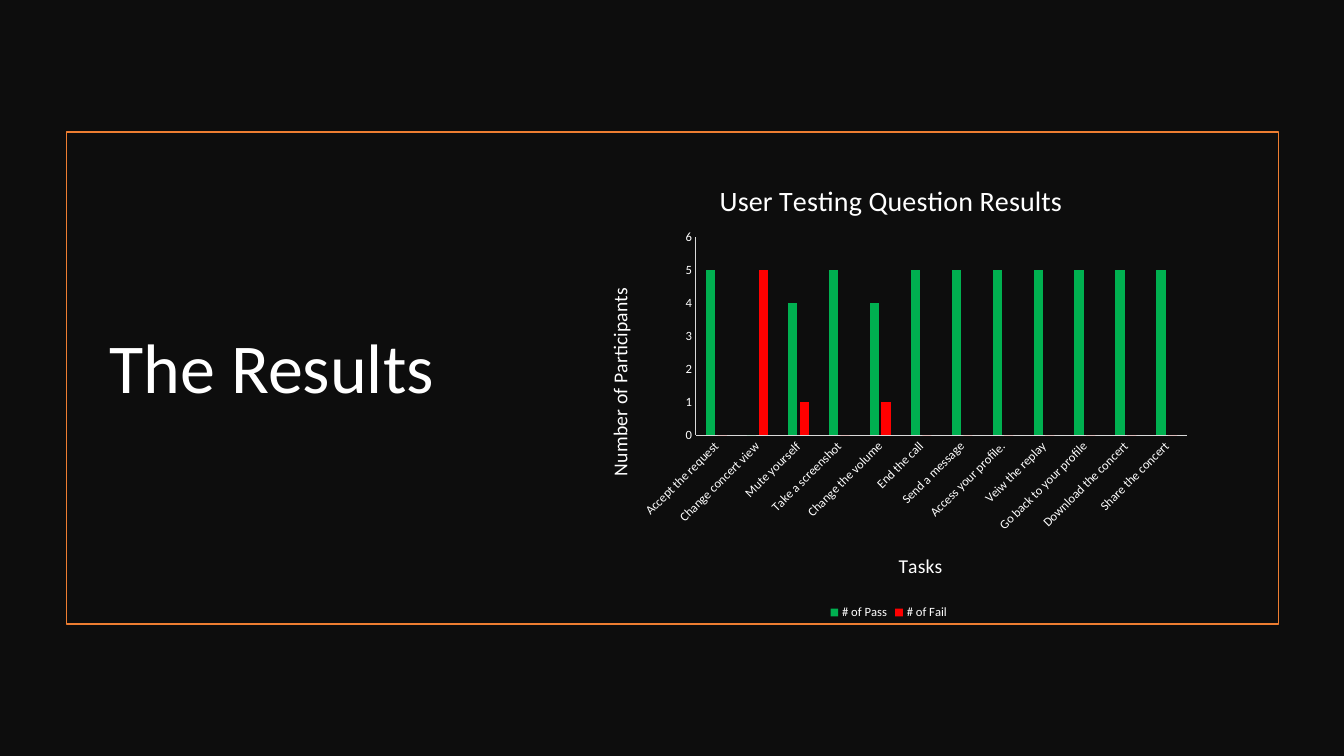
from lxml import etree
from pptx import Presentation
from pptx.chart.data import CategoryChartData
from pptx.dml.color import RGBColor
from pptx.enum.chart import XL_CHART_TYPE, XL_LEGEND_POSITION, XL_TICK_MARK
from pptx.enum.shapes import MSO_SHAPE
from pptx.enum.text import MSO_ANCHOR
from pptx.oxml.ns import qn
from pptx.util import Inches, Pt

COLUMN = XL_CHART_TYPE.COLUMN_CLUSTERED
BOTTOM = XL_LEGEND_POSITION.BOTTOM
NO_TICK = XL_TICK_MARK.NONE
RECT = MSO_SHAPE.RECTANGLE
ANCHOR = MSO_ANCHOR.BOTTOM

WIDE, HIGH = 13.33, 7.5
FONT = "Calibri"
HEX = {"back": "0D0D0D", "text": "FFFFFF", "frame": "ED7D31",
       "axis": "D9D9D9", "pass": "00B050", "fail": "FF0000"}

# task, passes, fails
TASKS = [
    ("Accept the request", 5, 0),
    ("Change concert view", 0, 5),
    ("Mute yourself", 4, 1),
    ("Take a screenshot", 5, 0),
    ("Change the volume", 4, 1),
    ("End the call", 5, 0),
    ("Send a message", 5, 0),
    ("Access your profile.", 5, 0),
    ("Veiw the replay", 5, 0),
    ("Go back to your profile", 5, 0),
    ("Download the concert", 5, 0),
    ("Share the concert", 5, 0),
]


def color(name):
    return RGBColor.from_string(HEX[name])


def style(font, size):
    font.name, font.size, font.bold = FONT, Pt(size), False
    font.color.rgb = color("text")


def write(frame, text, size):
    run = frame.paragraphs[0].add_run()
    run.text = text
    style(run.font, size)


def panel(slide, box, fill=None, line=None):
    shape = slide.shapes.add_shape(RECT, *map(Inches, box))
    shape.shadow.inherit = False
    if fill:
        shape.fill.solid()
        shape.fill.fore_color.rgb = color(fill)
    else:
        shape.fill.background()
    if line:
        shape.line.color.rgb = color(line)
        shape.line.width = Pt(1)
    else:
        shape.line.fill.background()


def heading(slide, box, text):
    shape = slide.shapes.add_textbox(*map(Inches, box))
    frame = shape.text_frame
    frame.word_wrap = True
    frame.vertical_anchor = ANCHOR
    frame.paragraphs[0].line_spacing = 0.9
    write(frame, text, 50)


def place(layout, inner=False, **shares):
    """Fix a chart part at shares (x, y, w, h) of the chart's size."""
    manual = etree.SubElement(layout, qn("c:manualLayout"))
    rows = [("layoutTarget", "inner")] if inner else []
    rows += [("xMode", "edge"), ("yMode", "edge"), *shares.items()]
    for tag, value in rows:
        etree.SubElement(manual, qn("c:" + tag)).set("val", str(value))


def label(title, text, size, x, y, turn=0):
    write(title.text_frame, text, size)
    body = title._element.find(".//" + qn("a:bodyPr"))
    body.set("rot", str(turn * 60000))
    body.set("vert", "horz")
    place(title._element.find(qn("c:layout")), x=x, y=y)


def ruler(axis):
    axis.has_major_gridlines = False
    axis.major_tick_mark = axis.minor_tick_mark = NO_TICK
    axis.format.line.color.rgb = color("axis")
    axis.format.line.width = Pt(0.75)
    style(axis.tick_labels.font, 9)


def results(slide, box):
    names, passes, fails = zip(*TASKS)
    data = CategoryChartData(number_format="General")
    data.categories = names
    data.add_series("# of Pass", passes)
    data.add_series("# of Fail", fails)
    chart = slide.shapes.add_chart(COLUMN, *map(Inches, box), data).chart
    style(chart.font, 10)

    plot = chart.plots[0]
    plot.gap_width, plot.overlap = 219, -27
    plot.vary_by_categories = False
    for bars, name in zip(plot.series, ("pass", "fail")):
        bars.format.fill.solid()
        bars.format.fill.fore_color.rgb = color(name)

    area = chart._chartSpace.find(".//" + qn("c:plotArea"))
    for old in area.findall(qn("c:layout")):
        area.remove(old)
    layout = etree.Element(qn("c:layout"))
    area.insert(0, layout)
    place(layout, inner=True, x=0.19, y=0.18, w=0.79, h=0.42)

    tasks, count = chart.category_axis, chart.value_axis
    ruler(tasks)
    ruler(count)
    count.minimum_scale, count.maximum_scale, count.major_unit = 0, 6, 1
    slant = tasks._element.find(qn("c:txPr")).find(qn("a:bodyPr"))
    slant.set("rot", str(-45 * 60000))
    slant.set("vert", "horz")

    chart.has_title = True
    label(chart.chart_title, "User Testing Question Results", 20, 0.22, 0.05)
    label(tasks.axis_title, "Tasks", 14, 0.51, 0.84)
    label(count.axis_title, "Number of Participants", 14, 0.04, 0.28, -90)

    chart.has_legend = True
    chart.legend.position = BOTTOM
    chart.legend.include_in_layout = False
    style(chart.legend.font, 9)


def main():
    deck = Presentation()
    deck.slide_width, deck.slide_height = Inches(WIDE), Inches(HIGH)
    slide = deck.slides.add_slide(deck.slide_layouts[6])
    left, top, wide, high = frame = (0.66, 1.31, 12.02, 4.88)
    panel(slide, (0, 0, WIDE, HIGH), fill="back")
    heading(slide, (left + 0.33, top + 0.18, 5.04, 2.61), "The Results")
    panel(slide, frame, line="frame")
    results(slide, (left + 5.07, top + 0.2, 6.17, high - 0.2))
    deck.save("out.pptx")


if __name__ == "__main__":
    main()
